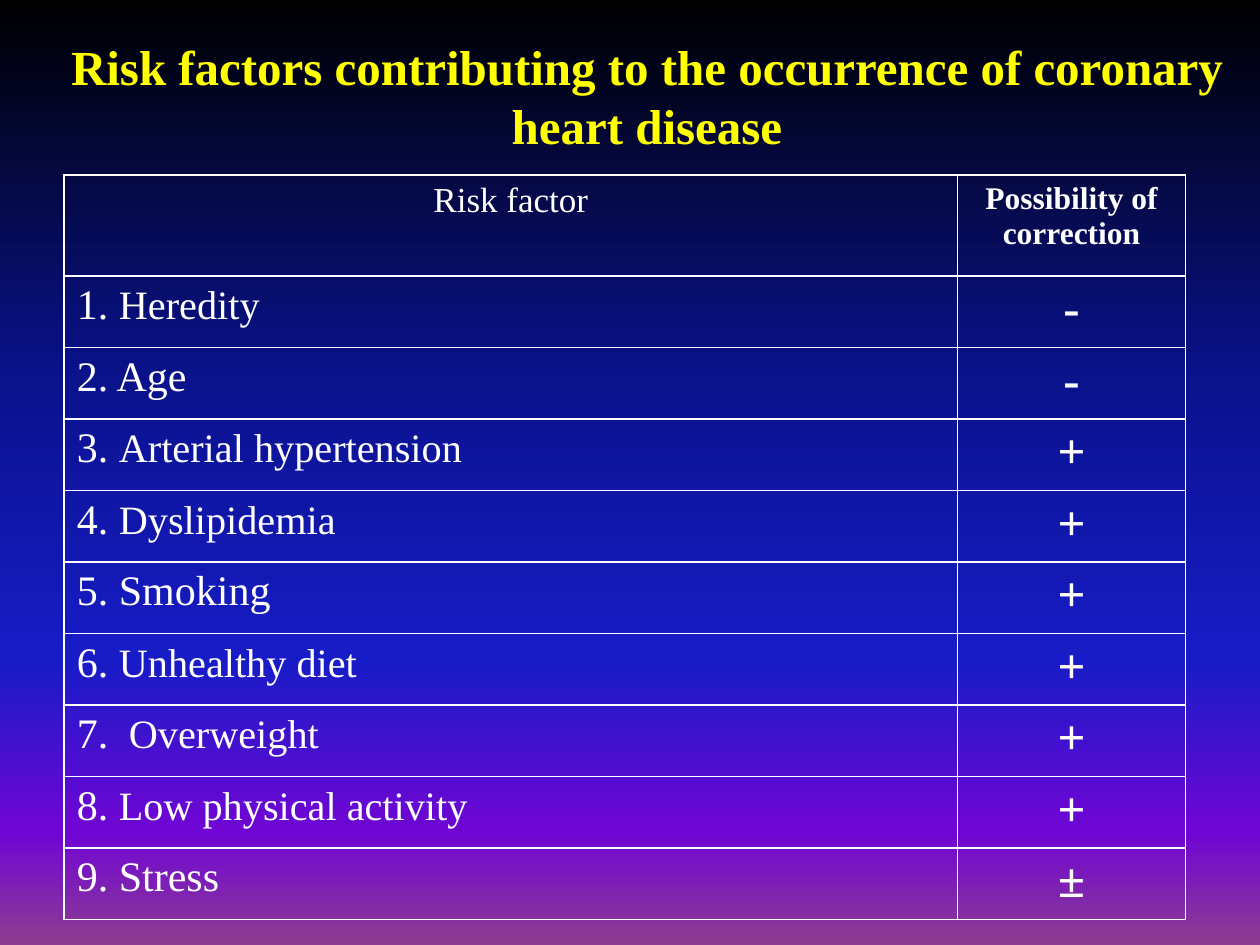
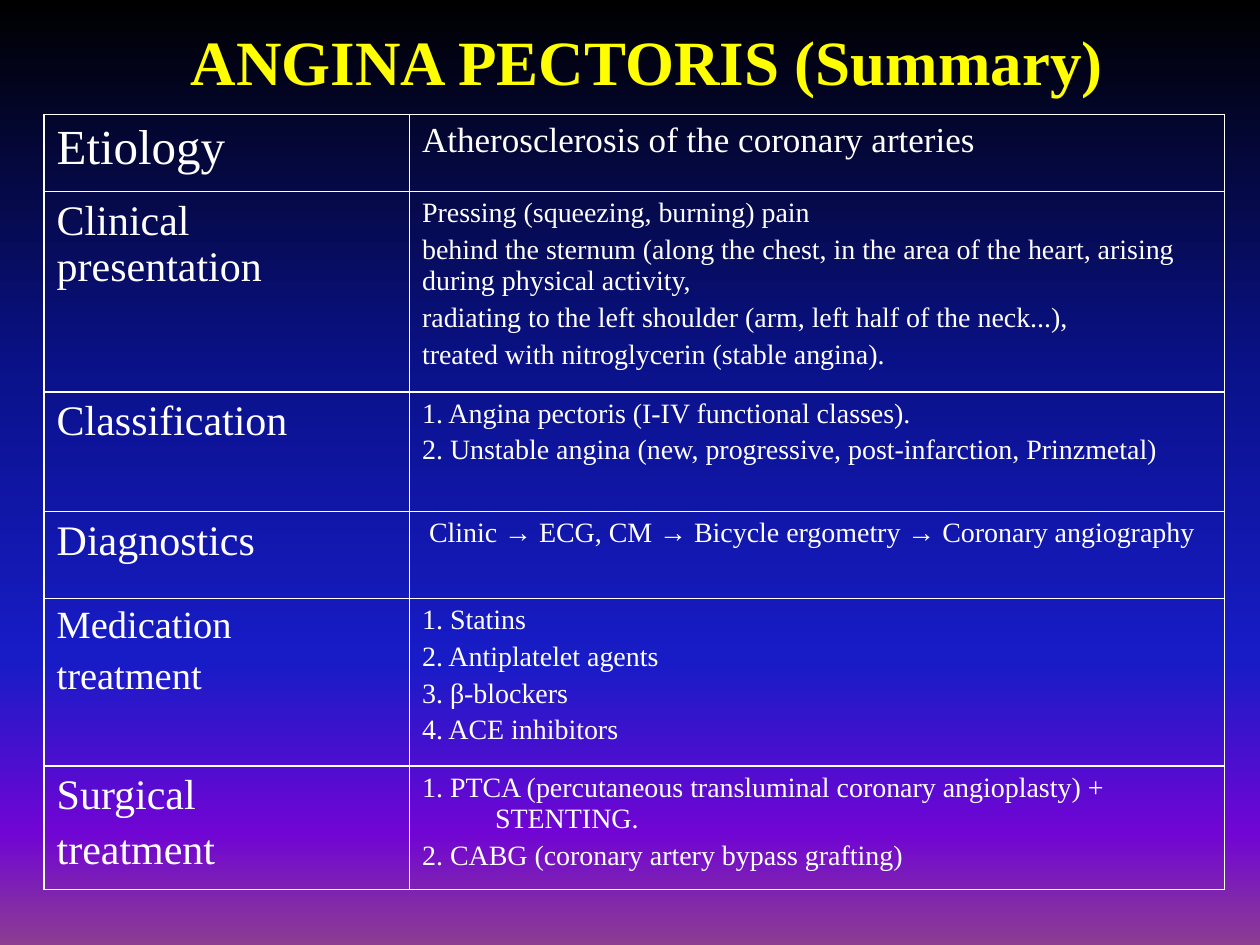
from dataclasses import dataclass

from lxml.etree import SubElement
from pptx import Presentation
from pptx.dml.color import RGBColor
from pptx.enum.text import MSO_ANCHOR, PP_ALIGN
from pptx.oxml.ns import qn
from pptx.util import Emu, Inches, Pt

# ---- Content ----
RISK_TITLE = "Risk factors contributing to the occurrence of coronary heart disease"
RISK_HEADER = ("Risk factor", "Possibility of correction")
# Factor, text size, possibility of correction
RISK_FACTORS = [
    ("Heredity", 23, "-"),
    ("Age", 24, "-"),
    ("Arterial hypertension", 23, "+"),
    ("Dyslipidemia", 23, "+"),
    ("Smoking", 24, "+"),
    ("Unhealthy diet", 23, "+"),
    (" Overweight", 23, "+"),
    ("Low physical activity", 23, "+"),
    ("Stress", 24, "±"),
]

SUMMARY_TITLE = "ANGINA PECTORIS (Summary)"
# Row height, topic lines, topic size, detail lines, detail size, hanging indent
SUMMARY = [
    (0.61, ["Etiology"], 28, ["Atherosclerosis of the coronary arteries"], 20, 0),
    (1.59, ["Clinical presentation"], 24, [
        "Pressing (squeezing, burning) pain",
        "behind the sternum (along the chest, in the area of the heart, "
        "arising during physical activity,",
        "radiating to the left shoulder (arm, left half of the neck...),",
        "treated with nitroglycerin (stable angina).",
    ], 16, 0),
    (0.95, ["Classification"], 24, [
        "1. Angina pectoris (I-IV functional classes).",
        "2. Unstable angina (new, progressive, post-infarction, Prinzmetal)",
    ], 16, 0),
    (0.69, ["Diagnostics"], 24, [
        " Clinic → ECG, CM → Bicycle ergometry → Coronary angiography",
    ], 16, 0),
    (1.33, ["Medication", "treatment"], 22, [
        "1. Statins", "2. Antiplatelet agents", "3. β-blockers", "4. ACE inhibitors",
    ], 16, 0.58),
    (0.98, ["Surgical", "treatment"], 24, [
        "1. PTCA (percutaneous transluminal coronary angioplasty) + STENTING.",
        "2. CABG (coronary artery bypass grafting)",
    ], 16, 0.58),
]


# ---- Theme ----
@dataclass(frozen=True)
class Theme:
    font: str = "Times New Roman"
    title: str = "FFFF00"
    text: str = "FFFFFF"
    border: str = "FFFFFF"
    border_width: int = 1
    # Position in percent, colour, from top to bottom
    background: tuple = ((0, "000000"), (40, "0A128C"), (70, "181CC7"),
                         (88, "7005D4"), (100, "8C3D91"))
    risk_title_size: int = 28
    summary_title_size: int = 36
    header_sizes: tuple = (20, 18)
    number_size: int = 24
    mark_size: int = 28
    space_share: float = 0.2  # space before a paragraph, as a share of its size


THEME = Theme()


# ---- Shared parts ----
def style_run(run, size, bold=False, color=THEME.text):
    font = run.font
    font.name, font.size, font.bold = THEME.font, Pt(size), bold
    font.color.rgb = RGBColor.from_string(color)


def add_slide(presentation, title, title_size, title_top):
    slide = presentation.slides.add_slide(presentation.slide_layouts[6])

    # Gradient background
    slide.background.fill.gradient()
    gradient = slide.element.find(".//" + qn("a:gradFill"))
    stops = gradient.find(qn("a:gsLst"))
    for stop in list(stops):
        stops.remove(stop)
    for position, color in THEME.background:
        stop = SubElement(stops, qn("a:gs"), pos=str(position * 1000))
        SubElement(stop, qn("a:srgbClr"), val=color)
    gradient.find(qn("a:lin")).set("ang", str(90 * 60000))

    # Title
    box = slide.shapes.add_textbox(Inches(0.27), Inches(title_top), Inches(9.73), Inches(0.95))
    frame = box.text_frame
    frame.word_wrap = True
    frame.vertical_anchor = MSO_ANCHOR.MIDDLE
    frame.text = title
    paragraph = frame.paragraphs[0]
    paragraph.alignment = PP_ALIGN.CENTER
    style_run(paragraph.runs[0], title_size, True, THEME.title)
    return slide


def style_cell(cell):
    properties = cell._tc.get_or_add_tcPr()
    for side in ("lnL", "lnR", "lnT", "lnB"):
        line = SubElement(properties, qn("a:" + side), w=str(Pt(THEME.border_width)))
        fill = SubElement(line, qn("a:solidFill"))
        SubElement(fill, qn("a:srgbClr"), val=THEME.border)
    cell.fill.background()


def add_table(slide, left, top, column_widths, row_heights):
    frame = slide.shapes.add_table(
        len(row_heights), len(column_widths), Inches(left), Inches(top),
        Inches(sum(column_widths)), Inches(sum(row_heights)))
    table = frame.table
    table.first_row = table.horz_banding = False
    for column, width in zip(table.columns, column_widths):
        column.width = Inches(width)
    for row, height in zip(table.rows, row_heights):
        row.height = Inches(height)
    for cell in table.iter_cells():
        style_cell(cell)
        cell.margin_left = cell.margin_right = Inches(0.1)
        cell.margin_top = cell.margin_bottom = Inches(0.05)
    return table


def write_centred(cell, text, size, bold):
    cell.text = text
    paragraph = cell.text_frame.paragraphs[0]
    paragraph.alignment = PP_ALIGN.CENTER
    style_run(paragraph.runs[0], size, bold)


def write_lines(cell, lines, size, hanging=0):
    cell.text = "\n".join(lines)
    for paragraph in cell.text_frame.paragraphs:
        if len(lines) > 1:
            paragraph.space_before = Pt(size * THEME.space_share)
        if hanging:
            properties = paragraph._p.get_or_add_pPr()
            properties.set("marL", str(Inches(hanging)))
            properties.set("indent", str(Emu(-Inches(hanging))))
        style_run(paragraph.runs[0], size)


# ---- Slides ----
def build_risk_slide(presentation):
    slide = add_slide(presentation, RISK_TITLE, THEME.risk_title_size, 0.28)
    header_height, table_height = 0.8, 5.9
    row_height = (table_height - header_height) / len(RISK_FACTORS)
    table = add_table(slide, 0.51, 1.39, (7.09, 1.81),
                      [header_height] + [row_height] * len(RISK_FACTORS))
    for column, text in enumerate(RISK_HEADER):
        write_centred(table.cell(0, column), text, THEME.header_sizes[column], column == 1)
    for number, (factor, size, mark) in enumerate(RISK_FACTORS, 1):
        paragraph = table.cell(number, 0).text_frame.paragraphs[0]
        for text, text_size in ((f"{number}. ", THEME.number_size), (factor, size)):
            run = paragraph.add_run()
            run.text = text
            style_run(run, text_size)
        write_centred(table.cell(number, 1), mark, THEME.mark_size, True)


def build_summary_slide(presentation):
    slide = add_slide(presentation, SUMMARY_TITLE, THEME.summary_title_size, 0)
    table = add_table(slide, 0.35, 0.91, (2.9, 6.47), [row[0] for row in SUMMARY])
    for index, (_, topic, topic_size, details, size, hanging) in enumerate(SUMMARY):
        write_lines(table.cell(index, 0), topic, topic_size)
        write_lines(table.cell(index, 1), details, size, hanging)


def main():
    presentation = Presentation()
    presentation.slide_width, presentation.slide_height = Inches(10), Inches(7.5)
    build_risk_slide(presentation)
    build_summary_slide(presentation)
    presentation.save("out.pptx")


if __name__ == "__main__":
    main()
